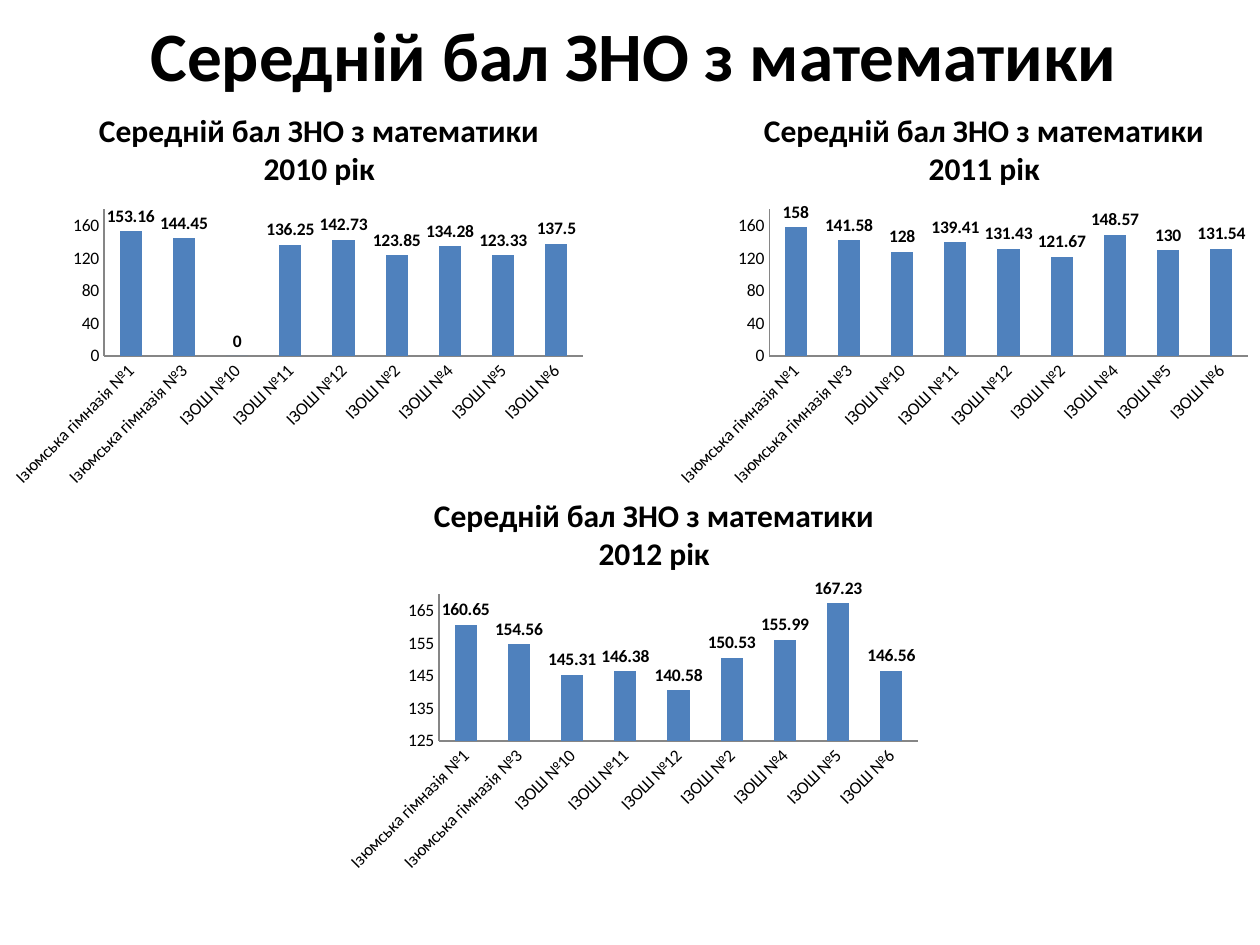
"""Build a slide comparing mean mathematics exam scores over three years."""
import dataclasses
import typing

import pptx
import pptx.chart.data
import pptx.dml.color
import pptx.enum.chart
import pptx.enum.text
import pptx.oxml
import pptx.oxml.ns
import pptx.util

PX = 914400 / 126
HEADING = "Середній бал ЗНО з математики"
SCHOOLS = ["Ізюмська гімназія №1", "Ізюмська гімназія №3"] + [
    f"ІЗОШ №{number}" for number in (10, 11, 12, 2, 4, 5, 6)
]
CHART_WIDTH, CHART_HEIGHT = 595, 397


@dataclasses.dataclass(frozen=True)
class Theme:
    font: str = "Calibri"
    text: str = "000000"
    bar: str = "4F81BD"
    axis: str = "868686"
    heading_size: float = 39.6
    chart_title_size: float = 18
    label_size: float = 10


@dataclasses.dataclass(frozen=True)
class YearChart:
    year: int
    left: int
    top: int
    scores: tuple[float, ...]
    minimum: int
    maximum: int
    step: int


THEME = Theme()
YEARS = (
    YearChart(2010, 0, 98,
              (153.16, 144.45, 0, 136.25, 142.73, 123.85, 134.28, 123.33, 137.5),
              0, 180, 40),
    YearChart(2011, 665, 98,
              (158, 141.58, 128, 139.41, 131.43, 121.67, 148.57, 130, 131.54),
              0, 180, 40),
    YearChart(2012, 335, 483,
              (160.65, 154.56, 145.31, 146.38, 140.58, 150.53, 155.99, 167.23, 146.56),
              125, 170, 10),
)


def px(length: int) -> pptx.util.Emu:
    return pptx.util.Emu(round(length * PX))


def rgb(colour: str) -> pptx.dml.color.RGBColor:
    return pptx.dml.color.RGBColor.from_string(colour)


def style_font(font: typing.Any, size: float, bold: bool) -> None:
    font.name = THEME.font
    font.size = pptx.util.Pt(size)
    font.bold = bold
    font.color.rgb = rgb(THEME.text)


def manual_layout(inner: bool = False, **fractions: float) -> typing.Any:
    target = '<c:layoutTarget val="inner"/>' if inner else ""
    modes = '<c:xMode val="edge"/><c:yMode val="edge"/>'
    values = "".join(f'<c:{key} val="{value}"/>' for key, value in fractions.items())
    return pptx.oxml.parse_xml(
        f'<c:layout {pptx.oxml.ns.nsdecls("c")}><c:manualLayout>'
        f"{target}{modes}{values}</c:manualLayout></c:layout>"
    )


def replace_layout(parent: typing.Any, layout: typing.Any, index: int) -> None:
    for old in parent.findall(pptx.oxml.ns.qn("c:layout")):
        parent.remove(old)
    parent.insert(index, layout)


def add_chart_title(chart: typing.Any, year: int) -> None:
    chart.has_title = True
    frame = chart.chart_title.text_frame
    for paragraph, line in ((frame.paragraphs[0], HEADING),
                            (frame.add_paragraph(), f"{year} рік")):
        paragraph.alignment = pptx.enum.text.PP_ALIGN.CENTER
        run = paragraph.add_run()
        run.text = line
        style_font(run.font, THEME.chart_title_size, True)
    replace_layout(chart.chart_title._element, manual_layout(x=0.16, y=0.02), 1)


def style_axes(chart: typing.Any, year_chart: YearChart) -> None:
    scores, schools = chart.value_axis, chart.category_axis
    scores.minimum_scale = year_chart.minimum
    scores.maximum_scale = year_chart.maximum
    scores.major_unit = year_chart.step
    for axis in (scores, schools):
        axis.has_major_gridlines = False
        axis.major_tick_mark = pptx.enum.chart.XL_TICK_MARK.NONE
        axis.minor_tick_mark = pptx.enum.chart.XL_TICK_MARK.NONE
        axis.format.line.color.rgb = rgb(THEME.axis)
        axis.format.line.width = pptx.util.Pt(0.75)
        style_font(axis.tick_labels.font, THEME.label_size, False)
    text_body = schools._element.find(".//" + pptx.oxml.ns.qn("a:bodyPr"))
    text_body.set("rot", "-2700000")
    text_body.set("vert", "horz")


def add_year_chart(slide: typing.Any, year_chart: YearChart) -> None:
    data = pptx.chart.data.CategoryChartData()
    data.categories = SCHOOLS
    data.add_series("Series 1", year_chart.scores)
    chart = slide.shapes.add_chart(
        pptx.enum.chart.XL_CHART_TYPE.COLUMN_CLUSTERED,
        px(year_chart.left), px(year_chart.top), px(CHART_WIDTH), px(CHART_HEIGHT), data,
    ).chart
    style_font(chart.font, THEME.label_size, False)
    chart.has_legend = False
    add_chart_title(chart, year_chart.year)
    style_axes(chart, year_chart)
    plot = chart.plots[0]
    plot.vary_by_categories = False
    plot.gap_width = 140
    bars = plot.series[0]
    bars.format.fill.solid()
    bars.format.fill.fore_color.rgb = rgb(THEME.bar)
    labels = bars.data_labels
    labels.show_value = True
    labels.position = pptx.enum.chart.XL_LABEL_POSITION.OUTSIDE_END
    style_font(labels.font, THEME.label_size, True)
    plot_area = chart._chartSpace.find(".//" + pptx.oxml.ns.qn("c:plotArea"))
    replace_layout(plot_area, manual_layout(True, x=0.175, y=0.28, w=0.805, h=0.37), 0)


def add_heading(slide: typing.Any) -> None:
    heading = slide.shapes.title
    heading.left, heading.top, heading.width, heading.height = map(px, (98, 0, 1071, 108))
    heading.text_frame.vertical_anchor = pptx.enum.text.MSO_ANCHOR.MIDDLE
    paragraph = heading.text_frame.paragraphs[0]
    paragraph.alignment = pptx.enum.text.PP_ALIGN.CENTER
    run = paragraph.add_run()
    run.text = HEADING
    style_font(run.font, THEME.heading_size, True)


def main() -> None:
    deck = pptx.Presentation()
    deck.slide_width, deck.slide_height = px(1260), px(945)
    slide = deck.slides.add_slide(deck.slide_layouts[0])
    subtitle = slide.placeholders[1]._element
    subtitle.getparent().remove(subtitle)
    add_heading(slide)
    for year_chart in YEARS:
        add_year_chart(slide, year_chart)
    deck.save("out.pptx")


if __name__ == "__main__":
    main()
